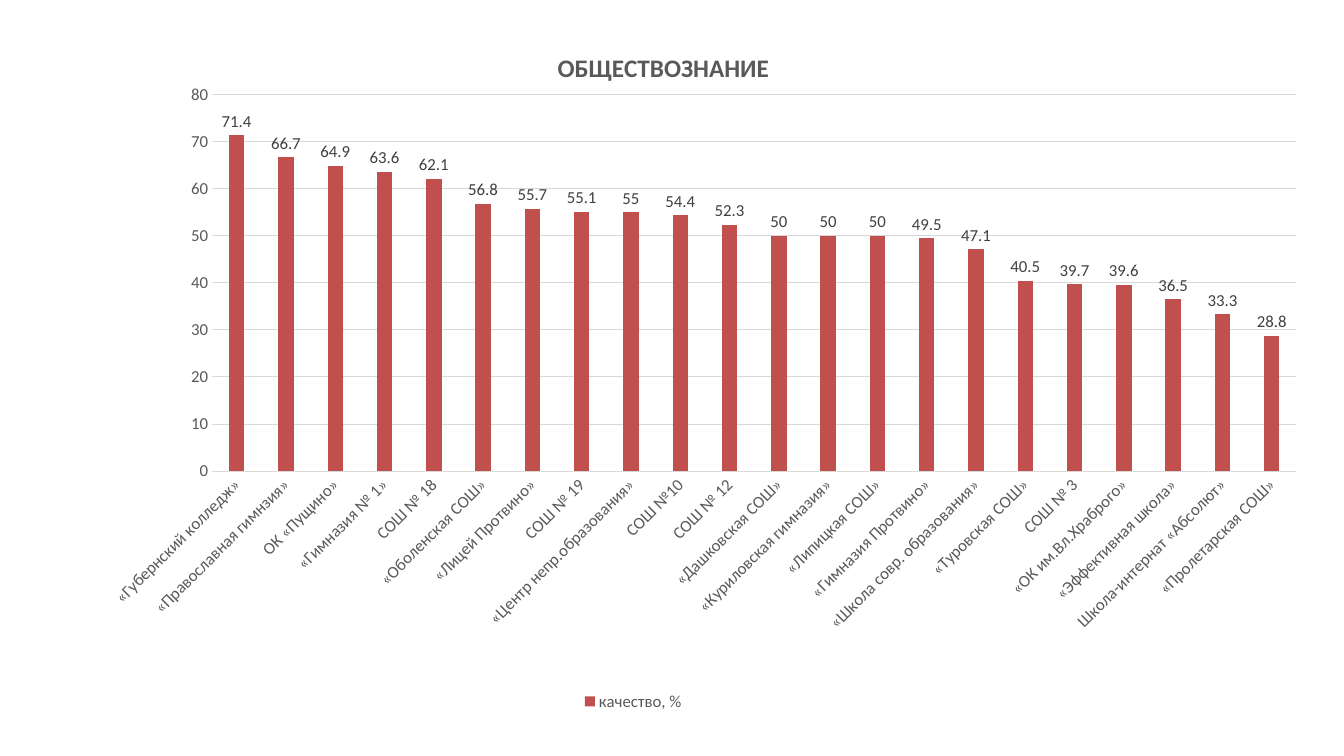
from lxml import etree
from pptx import Presentation, util as u
from pptx.chart.data import CategoryChartData
from pptx.dml.color import RGBColor
from pptx.enum import chart as charts
from pptx.oxml.ns import qn

RESULTS = [
    ("«Губернский колледж»", 71.4),
    ("«Православная гимнзия»", 66.7),
    ("ОК «Пущино»", 64.9),
    ("«Гимназия № 1»", 63.6),
    ("СОШ № 18", 62.1),
    ("«Оболенская СОШ»", 56.8),
    ("«Лицей Протвино»", 55.7),
    ("СОШ № 19", 55.1),
    ("«Центр непр.образования»", 55),
    ("СОШ №10", 54.4),
    ("СОШ № 12", 52.3),
    ("«Дашковская СОШ»", 50),
    ("«Куриловская гимназия»", 50),
    ("«Липицкая СОШ»", 50),
    ("«Гимназия Протвино»", 49.5),
    ("«Школа совр. образования»", 47.1),
    ("«Туровская СОШ»", 40.5),
    ("СОШ № 3", 39.7),
    ("«ОК им.Вл.Храброго»", 39.6),
    ("«Эффективная школа»", 36.5),
    ("Школа-интернат «Абсолют»", 33.3),
    ("«Пролетарская СОШ»", 28.8),
]
GREY, PALE, DARK, RED = "595959", "D9D9D9", "404040", "C0504D"


def paint(color_format, color):
    """Set a colour format from a hex string."""
    color_format.rgb = RGBColor.from_string(color)


def style_font(font, size=12, color=GREY, bold=False):
    """Format a chart font."""
    font.name, font.size, font.bold = "Calibri", u.Pt(size), bold
    paint(font.color, color)


def style_line(line, color=PALE, width=0.75):
    """Draw a thin solid line."""
    paint(line.color, color)
    line.width = u.Pt(width)


def place(element, index, target=None, **shares):
    """Give a chart part a manual layout in shares of the chart."""
    for layout in element.findall(qn("c:layout")):
        element.remove(layout)
    layout = etree.Element(qn("c:layout"))
    manual = etree.SubElement(layout, qn("c:manualLayout"))
    settings = {"layoutTarget": target} if target else {}
    settings |= {"xMode": "edge", "yMode": "edge"} | shares
    for name, value in settings.items():
        etree.SubElement(manual, qn(f"c:{name}")).set("val", str(value))
    element.insert(index, layout)


def add_title(chart, words):
    """Write the bold chart title."""
    chart.has_title = True
    title = chart.chart_title
    title.include_in_layout = False
    run = title.text_frame.paragraphs[0].add_run()
    run.text = words
    style_font(run.font, size=18, bold=True)
    place(title._element, 1, x=0.393, y=0.05)


def style_axes(chart):
    """Format both axes and the gridlines."""
    for axis in (chart.category_axis, chart.value_axis):
        axis.major_tick_mark = axis.minor_tick_mark = charts.XL_TICK_MARK.NONE
        style_font(axis.tick_labels.font)
    style_line(chart.category_axis.format.line)
    body = chart.category_axis._element.find(qn("c:txPr")).find(qn("a:bodyPr"))
    body.set("rot", "-2700000")
    body.set("vert", "horz")
    values = chart.value_axis
    values.minimum_scale, values.maximum_scale, values.major_unit = 0, 80, 10
    values.format.line.fill.background()
    values.has_major_gridlines = True
    style_line(values.major_gridlines.format.line)


def style_columns(plot):
    """Colour the columns and label their values."""
    plot.gap_width, plot.overlap, plot.vary_by_categories = 219, -27, False
    series = plot.series[0]
    series.format.fill.solid()
    paint(series.format.fill.fore_color, RED)
    labels = series.data_labels
    labels.show_value = True
    labels.position = charts.XL_LABEL_POSITION.OUTSIDE_END
    style_font(labels.font, color=DARK)


def add_legend(chart):
    """Put the legend at the bottom."""
    chart.has_legend = True
    legend = chart.legend
    legend.position = charts.XL_LEGEND_POSITION.BOTTOM
    legend.include_in_layout = False
    style_font(legend.font)
    place(legend._element, 1, x=0.413, y=0.953, w=0.09, h=0.037)


def add_results_chart(slide, left, top, width, height):
    """Add the column chart of results in the given box."""
    data = CategoryChartData()
    schools, scores = zip(*RESULTS)
    data.categories = schools
    data.add_series("качество, %", scores)
    chart = slide.shapes.add_chart(
        charts.XL_CHART_TYPE.COLUMN_CLUSTERED, left, top, width, height, data
    ).chart
    style_font(chart.font, size=10, color="000000")
    add_title(chart, "ОБЩЕСТВОЗНАНИЕ")
    style_axes(chart)
    style_columns(chart.plots[0])
    add_legend(chart)
    plot_area = chart._chartSpace.find(qn("c:chart")).find(qn("c:plotArea"))
    place(plot_area, 0, "inner", x=0.117, y=0.119, w=0.878, h=0.529)


def main():
    """Build the slide and save it."""
    presentation = Presentation()
    presentation.slide_width = u.Inches(13.33)
    presentation.slide_height = u.Inches(7.5)
    slide = presentation.slides.add_slide(presentation.slide_layouts[6])
    add_results_chart(slide, u.Inches(0.67), u.Inches(0.1), u.Inches(12.25), u.Inches(7.06))
    presentation.save("out.pptx")


if __name__ == "__main__":
    main()
